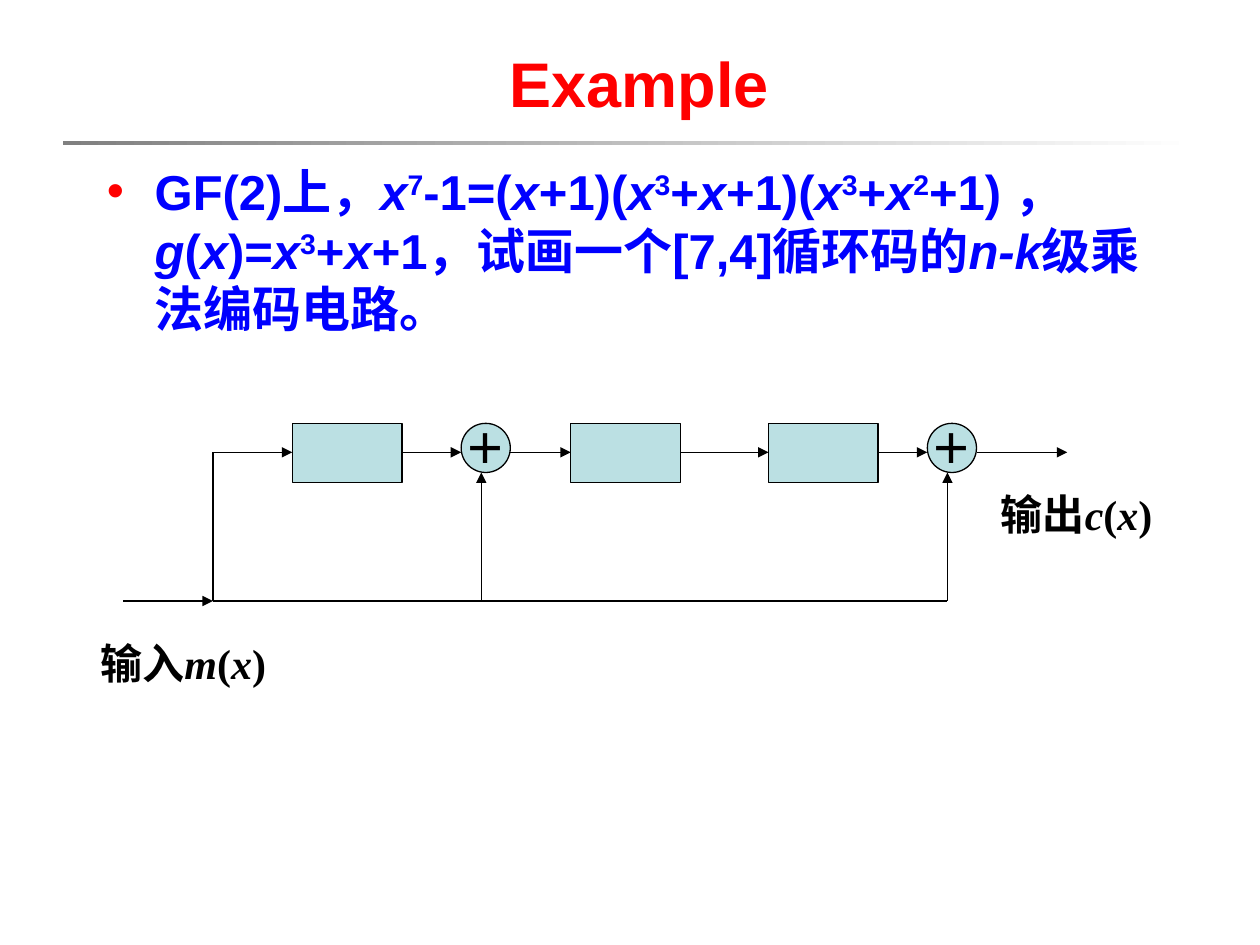
from dataclasses import dataclass

from lxml.etree import SubElement
from pptx import Presentation
from pptx.dml.color import RGBColor
from pptx.enum.shapes import MSO_CONNECTOR, MSO_SHAPE
from pptx.enum.text import MSO_ANCHOR, PP_ALIGN
from pptx.oxml.ns import qn
from pptx.util import Inches, Pt


@dataclass(frozen=True)
class Theme:
    red: str = "FF0000"
    blue: str = "0000FF"
    black: str = "000000"
    gray: str = "808080"
    white: str = "FFFFFF"
    block: str = "BBE0E3"
    sans: str = "Arial"
    serif: str = "Times New Roman"
    title: int = 36
    body: int = 28
    label: int = 24
    line: float = 0.75


T = Theme()

# Circuit grid, in inches
TOP, SIGNAL_Y, INPUT_Y = 3.36, 3.59, 4.77
BLOCK_W, BLOCK_H, ADDER_D = 0.87, 0.47, 0.39
BLOCKS = (2.32, 4.53, 6.1)
ADDERS = (3.66, 7.36)
START_X, BRANCH_X, END_X = 0.98, 1.69, 8.47
TAP_DX = 0.16


def rgb(value):
    return RGBColor.from_string(value)


def add_bullet(p, char, color, indent):
    pPr = p._p.get_or_add_pPr()
    pPr.set("marL", str(Inches(indent)))
    pPr.set("indent", str(-Inches(indent)))
    clr = SubElement(pPr, qn("a:buClr"))
    SubElement(clr, qn("a:srgbClr"), val=color)
    SubElement(pPr, qn("a:buFont"), typeface=T.sans)
    SubElement(pPr, qn("a:buChar"), char=char)


def write_text(s, text, size, color, align=PP_ALIGN.LEFT, anchor=MSO_ANCHOR.TOP,
               wrap=True, bullet=None, math_font=T.sans):
    """Runs are split by |; a leading * marks italics, ^ a superscript.

    Runs after the first use math_font.
    """
    tf = s.text_frame
    tf.word_wrap = wrap
    tf.vertical_anchor = anchor
    p = tf.paragraphs[0]
    p.alignment = align
    if bullet:
        add_bullet(p, bullet, T.red, 0.38)
    for i, part in enumerate(text.split("|")):
        r = p.add_run()
        r.text = part.lstrip("*^")
        r.font.name = math_font if i else T.sans
        r.font.size = Pt(size)
        r.font.bold = True
        r.font.italic = part.startswith("*")
        r.font.color.rgb = rgb(color)
        if part.startswith("^"):
            r.font._element.set("baseline", "30000")


def add_text(slide, x, y, w, h, text, **fmt):
    s = slide.shapes.add_textbox(Inches(x), Inches(y), Inches(w), Inches(h))
    write_text(s, text, **fmt)


def add_box(slide, kind, x, y, w, h):
    s = slide.shapes.add_shape(kind, Inches(x), Inches(y), Inches(w), Inches(h))
    s.shadow.inherit = False
    s.fill.solid()
    s.fill.fore_color.rgb = rgb(T.block)
    s.line.color.rgb = rgb(T.black)
    s.line.width = Pt(T.line)
    return s


def add_rule(slide):
    s = add_box(slide, MSO_SHAPE.RECTANGLE, 0.5, 1.12, 9, 0.03)
    s.line.fill.background()
    s.fill.gradient()
    s.fill.gradient_angle = 0
    for stop, color in zip(s.fill.gradient_stops, (T.gray, T.white)):
        stop.color.rgb = rgb(color)


def add_adder(slide, x):
    s = add_box(slide, MSO_SHAPE.OVAL, x, TOP, ADDER_D, ADDER_D)
    write_text(s, "＋", size=T.label, color=T.black, align=PP_ALIGN.CENTER,
               anchor=MSO_ANCHOR.MIDDLE, wrap=False)


def add_wire(slide, x1, y1, x2, y2, arrow=True):
    s = slide.shapes.add_connector(MSO_CONNECTOR.STRAIGHT, Inches(x1), Inches(y1),
                                   Inches(x2), Inches(y2))
    s.line.color.rgb = rgb(T.black)
    s.line.width = Pt(T.line)
    if arrow:
        SubElement(s.line._get_or_add_ln(), qn("a:tailEnd"), type="triangle")
    SubElement(s._element.spPr, qn("a:effectLst"))


def add_circuit(slide):
    for x in BLOCKS:
        add_box(slide, MSO_SHAPE.RECTANGLE, x, TOP, BLOCK_W, BLOCK_H)
    for x in ADDERS:
        add_adder(slide, x)

    # Signal path: each wire joins one part to the next
    parts = sorted([(x, x + BLOCK_W) for x in BLOCKS]
                   + [(x, x + ADDER_D) for x in ADDERS])
    starts = [BRANCH_X] + [right for _, right in parts]
    ends = [left for left, _ in parts] + [END_X]
    for x1, x2 in zip(starts, ends):
        add_wire(slide, x1, SIGNAL_Y, x2, SIGNAL_Y)

    # Input line and its taps
    taps = [x + TAP_DX for x in ADDERS]
    add_wire(slide, START_X, INPUT_Y, BRANCH_X, INPUT_Y)
    add_wire(slide, BRANCH_X, INPUT_Y, BRANCH_X, SIGNAL_Y, arrow=False)
    add_wire(slide, BRANCH_X, INPUT_Y, taps[-1], INPUT_Y, arrow=False)
    for x in taps:
        add_wire(slide, x, INPUT_Y, x, TOP + ADDER_D)

    # Input and output labels
    for x, y, text in ((0.67, 5.01, "输入|*m|(|*x|)"),
                       (7.76, 3.83, "输出|*c|(|*x|)")):
        add_text(slide, x, y, 1.57, 0.5, text, size=T.label, color=T.black,
                 align=PP_ALIGN.CENTER, math_font=T.serif)


def main():
    prs = Presentation()
    prs.slide_width, prs.slide_height = Inches(10), Inches(7.5)
    slide = prs.slides.add_slide(prs.slide_layouts[6])

    # Heading and problem statement
    add_rule(slide)
    add_text(slide, 1.61, 0.28, 6.93, 0.75, "Example", size=T.title, color=T.red,
             align=PP_ALIGN.CENTER, anchor=MSO_ANCHOR.MIDDLE)
    add_text(slide, 0.75, 1.23, 8.5, 5.59,
             "GF(2)上，|*x|^7|-1=(|*x|+1)(|*x|^3|+|*x|+1)(|*x|^3|+|*x|^2|+1) ，"
             "|*g|(|*x|)=|*x|^3|+|*x|+1，试画一个[7,4]循环码的|*n-k|级乘法编码电路。",
             size=T.body, color=T.blue, bullet="•")

    add_circuit(slide)
    prs.save("out.pptx")


if __name__ == "__main__":
    main()
